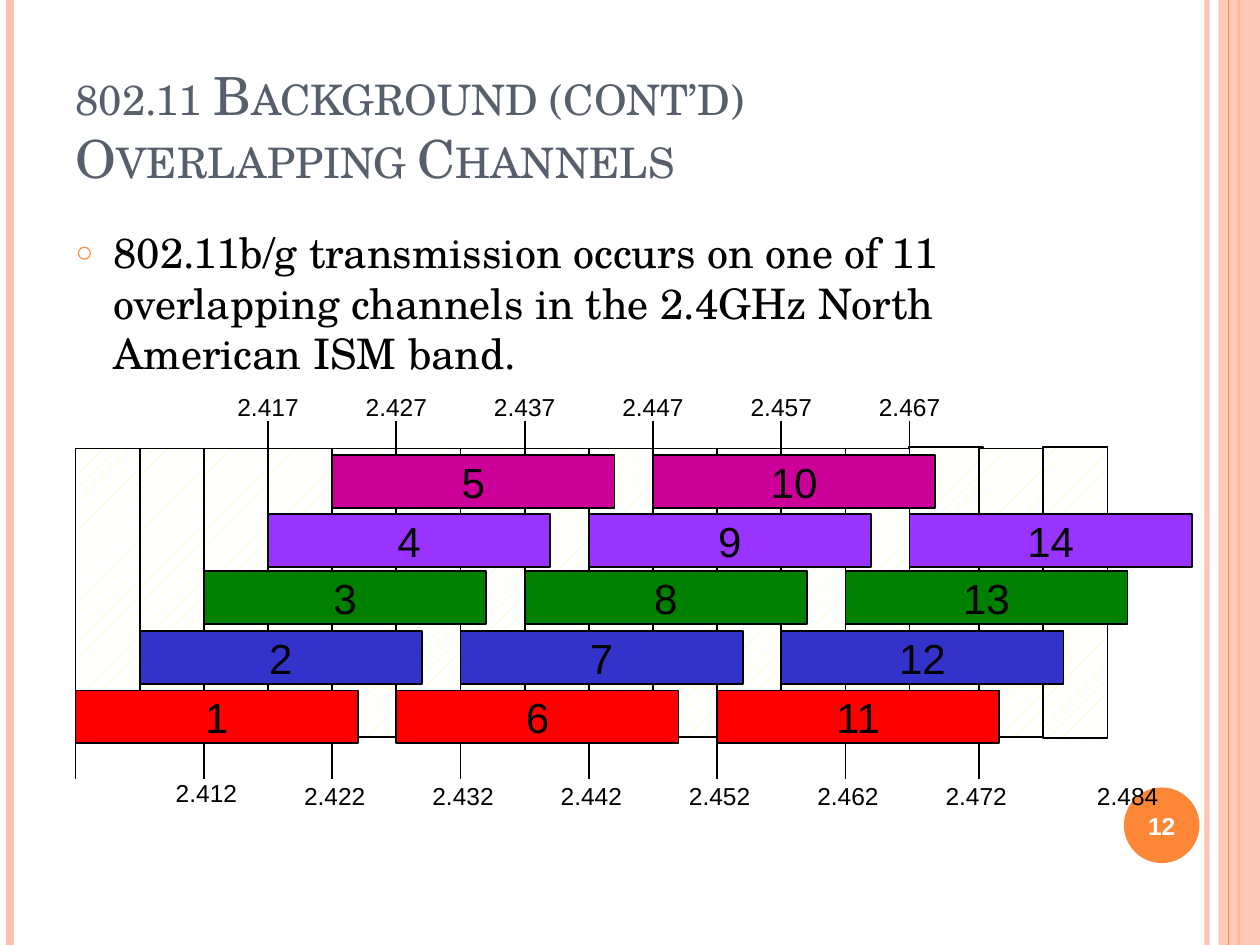
"""Build a slide on the overlapping 802.11 channels of the 2.4GHz band."""
from lxml import etree
from pptx import Presentation
from pptx.dml.color import RGBColor
from pptx.enum.dml import MSO_PATTERN
from pptx.enum.shapes import MSO_CONNECTOR, MSO_SHAPE
from pptx.enum.text import MSO_ANCHOR, MSO_AUTO_SIZE, PP_ALIGN
from pptx.oxml.ns import qn
from pptx.util import Inches, Pt

RECTANGLE, OVAL = MSO_SHAPE.RECTANGLE, MSO_SHAPE.OVAL
STRAIGHT = MSO_CONNECTOR.STRAIGHT
DOTTED = MSO_PATTERN.PERCENT_10
LEFT, CENTER = PP_ALIGN.LEFT, PP_ALIGN.CENTER
TOP, MIDDLE, BOTTOM = MSO_ANCHOR.TOP, MSO_ANCHOR.MIDDLE, MSO_ANCHOR.BOTTOM
NO_AUTOFIT = MSO_AUTO_SIZE.NONE

BLACK = RGBColor(0x00, 0x00, 0x00)
WHITE = RGBColor(0xFF, 0xFF, 0xFF)
SLATE = RGBColor(0x57, 0x5F, 0x6D)
ORANGE = RGBColor(0xFE, 0x86, 0x37)
PEACH = RGBColor(0xFE, 0xC3, 0xAE)
CREAM = RGBColor(0xFF, 0xF3, 0x9D)
RED = RGBColor(0xFF, 0x00, 0x00)
BLUE = RGBColor(0x33, 0x33, 0xCC)
GREEN = RGBColor(0x00, 0x80, 0x00)
PURPLE = RGBColor(0x99, 0x33, 0xFF)
MAGENTA = RGBColor(0xCC, 0x00, 0x99)

SERIF, SANS = "TeX Gyre Schola", "Arial"
BAND_LEFT = 0.6
PITCH = (6.71 - BAND_LEFT) / 12
CHANNEL_ROWS = [(5.48, RED), (5.01, BLUE), (4.53, GREEN), (4.08, PURPLE), (3.61, MAGENTA)]
LOWER_LABELS = ["2.412", "2.422", "2.432", "2.442", "2.452", "2.462", "2.472"]
UPPER_LABELS = ["2.417", "2.427", "2.437", "2.447", "2.457", "2.467"]


def band_position(step):
    """Return the horizontal position of a 5 MHz step of the band."""
    return BAND_LEFT + step * PITCH


def set_font(paragraph, name, size, color, bold=False):
    """Set the font of a whole paragraph."""
    font = paragraph.font
    font.name, font.size, font.bold = name, Pt(size), bold
    font.color.rgb = color


def set_alpha(shape, percent):
    """Make the first solid colour of a shape partly transparent."""
    color = next(shape._element.spPr.iter(qn("a:srgbClr")))
    etree.SubElement(color, qn("a:alpha"), val=str(percent * 1000))


def add_box(shapes, kind, left, top, width, height, color, outline=None):
    """Add a filled preset shape without a shadow."""
    shape = shapes.add_shape(kind, Inches(left), Inches(top), Inches(width), Inches(height))
    shape.shadow.inherit = False
    shape.fill.solid()
    shape.fill.fore_color.rgb = color
    if outline is None:
        shape.line.fill.background()
    else:
        shape.line.color.rgb = outline
        shape.line.width = Pt(1)
    return shape


def add_cell(shapes, left, top, width, height):
    """Add a dotted cell of the frequency band."""
    cell = add_box(shapes, RECTANGLE, left, top, width, height, WHITE, BLACK)
    cell.fill.patterned()
    cell.fill.pattern = DOTTED
    cell.fill.fore_color.rgb = CREAM
    cell.fill.back_color.rgb = WHITE


def add_vertical_line(slide, x, top, bottom, color=BLACK, width=1):
    """Add a vertical line without a shadow."""
    line = slide.shapes.add_connector(STRAIGHT, Inches(x), Inches(top), Inches(x), Inches(bottom))
    line.line.color.rgb = color
    line.line.width = Pt(width)
    etree.SubElement(line._element.spPr, qn("a:effectLst"))
    return line


def write_centered(shape, text, size, color=BLACK, bold=False):
    """Write one centred, unwrapped line into a shape."""
    frame = shape.text_frame
    frame.word_wrap = False
    frame.vertical_anchor = MIDDLE
    paragraph = frame.paragraphs[0]
    paragraph.text = text
    paragraph.alignment = CENTER
    set_font(paragraph, SANS, size, color, bold)


def add_label(slide, text, center, top, height=0.33, **style):
    """Add a small label centred on a position."""
    width = 0.69
    label = slide.shapes.add_textbox(
        Inches(center - width / 2), Inches(top), Inches(width), Inches(height))
    write_centered(label, text, 14, **style)


def fill_placeholder(placeholder, text, top, height, anchor):
    """Place a placeholder, write its text and return the paragraph."""
    placeholder.left, placeholder.top = Inches(0.5), Inches(top)
    placeholder.width, placeholder.height = Inches(8.17), Inches(height)
    frame = placeholder.text_frame
    frame.auto_size = NO_AUTOFIT
    frame.vertical_anchor = anchor
    paragraph = frame.paragraphs[0]
    paragraph.text = text
    paragraph.alignment = LEFT
    return paragraph


def add_title(slide):
    """Write the title in small capitals."""
    paragraph = fill_placeholder(
        slide.shapes.title, "802.11 Background (cont’d)\vOverlapping Channels", 0.3, 1.25, BOTTOM)
    set_font(paragraph, SERIF, 30, SLATE)
    paragraph._p.pPr.find(qn("a:defRPr")).set("cap", "small")


def add_body(slide):
    """Write the bulleted sentence."""
    paragraph = fill_placeholder(
        slide.placeholders[1],
        "802.11b/g transmission occurs on one of 11 overlapping channels "
        "in the 2.4GHz North American ISM band.", 1.75, 1.37, TOP)
    properties = paragraph._p.get_or_add_pPr()
    properties.set("marL", str(Inches(0.3)))
    properties.set("indent", str(-Inches(0.3)))
    bullet_color = etree.SubElement(properties, qn("a:buClr"))
    etree.SubElement(bullet_color, qn("a:srgbClr"), val=str(ORANGE))
    etree.SubElement(properties, qn("a:buSzPct"), val="70000")
    etree.SubElement(properties, qn("a:buChar"), char="○")
    paragraph.space_before = Pt(6)
    set_font(paragraph, SERIF, 24, BLACK)


def add_decoration(slide):
    """Add the edge stripes and the page number disc."""
    for x, color, width, alpha in [(9.58, PEACH, 3, 93), (0.08, PEACH, 4.5, 100),
                                   (9.83, ORANGE, 1.5, 100)]:
        set_alpha(add_vertical_line(slide, x, 0, 7.5, color, width), alpha)
    set_alpha(add_box(slide.shapes, RECTANGLE, 9.67, 0, 0.33, 7.5, PEACH), 87)
    add_vertical_line(slide, 9.75, 0, 7.5, ORANGE, 0.75)
    add_box(slide.shapes, OVAL, 8.92, 6.25, 0.6, 0.6, ORANGE)


def add_band(slide):
    """Add the grid of the band with its ticks and frequencies."""
    cells = slide.shapes.add_group_shape().shapes
    add_cell(cells, 8.28, 3.55, 0.51, 2.31)
    add_cell(cells, 7.21, 3.55, 0.59, 2.31)
    for left in [band_position(step) for step in range(13)] + [7.77]:
        add_cell(cells, left, 3.56, 0.51, 2.29)
    for x in [band_position(step) for step in range(0, 13, 2)] + [7.77]:
        add_vertical_line(slide, x, 5.72, 6.18)
    for index, text in enumerate(UPPER_LABELS):
        x = band_position(2 * index + 3)
        add_vertical_line(slide, x, 3.34, 3.8)
        add_label(slide, text, x, 3.06)
    for index, text in enumerate(LOWER_LABELS):
        add_label(slide, text, band_position(2 * index + 2) + 0.02, 6.15 if index else 6.13)
    add_label(slide, "2.484", 8.95, 6.15)


def add_channels(slide):
    """Add the numbered channel bars, five to a staircase."""
    for index in range(14):
        top, color = CHANNEL_ROWS[index % len(CHANNEL_ROWS)]
        bar = add_box(slide.shapes, RECTANGLE, band_position(index), top, 2.24, 0.42, color, BLACK)
        write_centered(bar, str(index + 1), 24)


def main():
    """Build and save the slide."""
    presentation = Presentation()
    presentation.slide_width, presentation.slide_height = Inches(10), Inches(7.5)
    slide = presentation.slides.add_slide(presentation.slide_layouts[1])
    add_decoration(slide)
    add_title(slide)
    add_body(slide)
    add_band(slide)
    add_channels(slide)
    add_label(slide, "12", 9.22, 6.27, 0.57, color=WHITE, bold=True)
    presentation.save("out.pptx")


if __name__ == "__main__":
    main()
